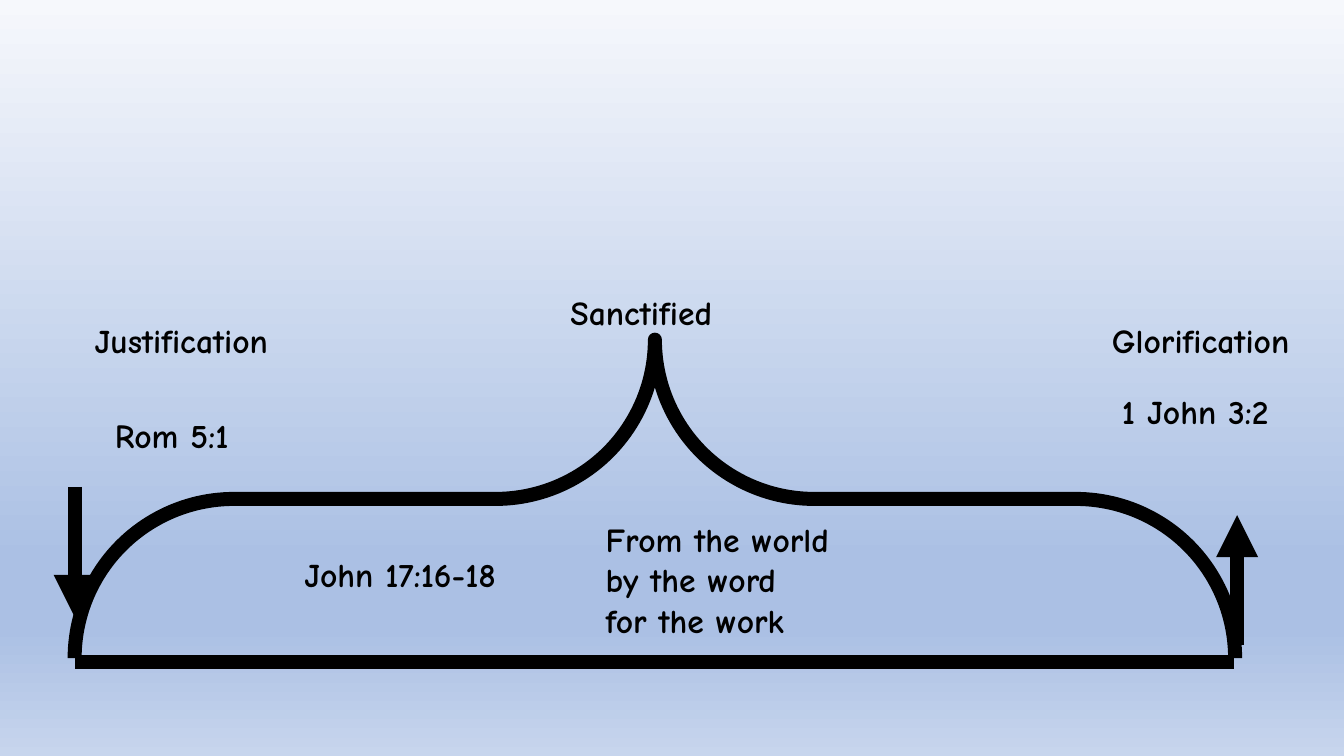
import pptx
import pptx.dml.color
import pptx.enum.shapes
import pptx.enum.text
import pptx.oxml
import pptx.oxml.ns
import pptx.util
from pptx.util import Inches

COLORS = {"ink": "000000", "pale": "F6F8FC", "mid": "ABC0E4", "soft": "C7D5ED"}
BACKGROUND_STOPS = [(0, "pale"), (74, "mid"), (83, "mid"), (100, "soft")]
FONT = "Comic Neue"
LINE_WIDTH = 10
LABELS = [
    (0.84, 3.12, 2.24, 0.5, "Justification"),
    (10.93, 3.12, 2.18, 0.5, "Glorification"),
    (11.03, 3.83, 2.03, 0.5, "1 John 3:2"),
    (5.56, 2.85, 1.88, 0.5, "Sanctified"),
    (5.91, 5.1, 2.7, 1.31, "From the world\nby the word\nfor the work"),
    (2.92, 5.45, 2.7, 0.5, "John 17:16-18"),
    (1.04, 4.07, 1.56, 0.5, "Rom 5:1"),
]


def rgb(name):
    """Return the named colour."""
    return pptx.dml.color.RGBColor.from_string(COLORS[name])


def add_element(parent, tag, **attributes):
    """Append a drawing element with the given attributes."""
    element = pptx.oxml.parse_xml(f"<{tag} {pptx.oxml.ns.nsdecls('a')}/>")
    for name, value in attributes.items():
        element.set(name, str(value))
    parent.append(element)
    return element


def paint_background(slide):
    """Fill the slide with a vertical gradient."""
    fill = slide.background.fill
    fill.gradient()
    fill.gradient_angle = 270
    stop_list = slide.element.xpath(".//p:bg//a:gsLst")[0]
    for stop in list(stop_list):
        stop_list.remove(stop)
    for percent, color in BACKGROUND_STOPS:
        stop = add_element(stop_list, "a:gs", pos=percent * 1000)
        add_element(stop, "a:srgbClr", val=COLORS[color])


def style_line(shape):
    """Give a shape or connector the heavy outline."""
    shape.line.width = pptx.util.Pt(LINE_WIDTH)
    shape.line.color.rgb = rgb("ink")


def add_line(slide, start, end, arrow=False):
    """Draw a straight line, with an arrowhead at its end if asked."""
    connector = slide.shapes.add_connector(
        pptx.enum.shapes.MSO_CONNECTOR.STRAIGHT, *map(Inches, start + end))
    style_line(connector)
    properties = connector.element.spPr
    if arrow:
        add_element(properties.xpath("./a:ln")[0], "a:tailEnd", type="triangle")
    add_element(properties, "a:effectLst")


def add_timeline(slide, left, top, width, height):
    """Draw the upward brace over its base line, with an arrow at each end."""
    right, bottom = left + width, top + height
    add_line(slide, (left, bottom + 0.04), (right - 0.01, bottom + 0.04))
    add_line(slide, (left, top + 1.46), (left, top + 2.75), arrow=True)
    add_line(slide, (right + 0.02, top + 3.03), (right + 0.02, top + 1.74), arrow=True)
    brace = slide.shapes.add_shape(
        pptx.enum.shapes.MSO_SHAPE.LEFT_BRACE,
        Inches(left + (width - height) / 2), Inches(top + (height - width) / 2),
        Inches(height), Inches(width))
    brace.rotation = 90
    brace.adjustments[0] = brace.adjustments[1] = 0.5
    brace.fill.background()
    brace.shadow.inherit = False
    style_line(brace)


def add_label(slide, left, top, width, height, text):
    """Write a bold label in the given box."""
    label = slide.shapes.add_textbox(*map(Inches, (left, top, width, height)))
    frame = label.text_frame
    frame.text = text
    frame.word_wrap = False
    frame.auto_size = pptx.enum.text.MSO_AUTO_SIZE.SHAPE_TO_FIT_TEXT
    for paragraph in frame.paragraphs:
        for run in paragraph.runs:
            run.font.name = FONT
            run.font.size = pptx.util.Pt(24)
            run.font.bold = True
            run.font.color.rgb = rgb("ink")


def main():
    """Build the slide and save it."""
    presentation = pptx.Presentation()
    presentation.slide_width = Inches(13.33)
    presentation.slide_height = Inches(7.5)
    slide = presentation.slides.add_slide(presentation.slide_layouts[6])
    paint_background(slide)
    add_timeline(slide, 0.74, 3.37, 11.51, 3.16)
    for label in LABELS:
        add_label(slide, *label)
    presentation.save("out.pptx")


if __name__ == "__main__":
    main()
